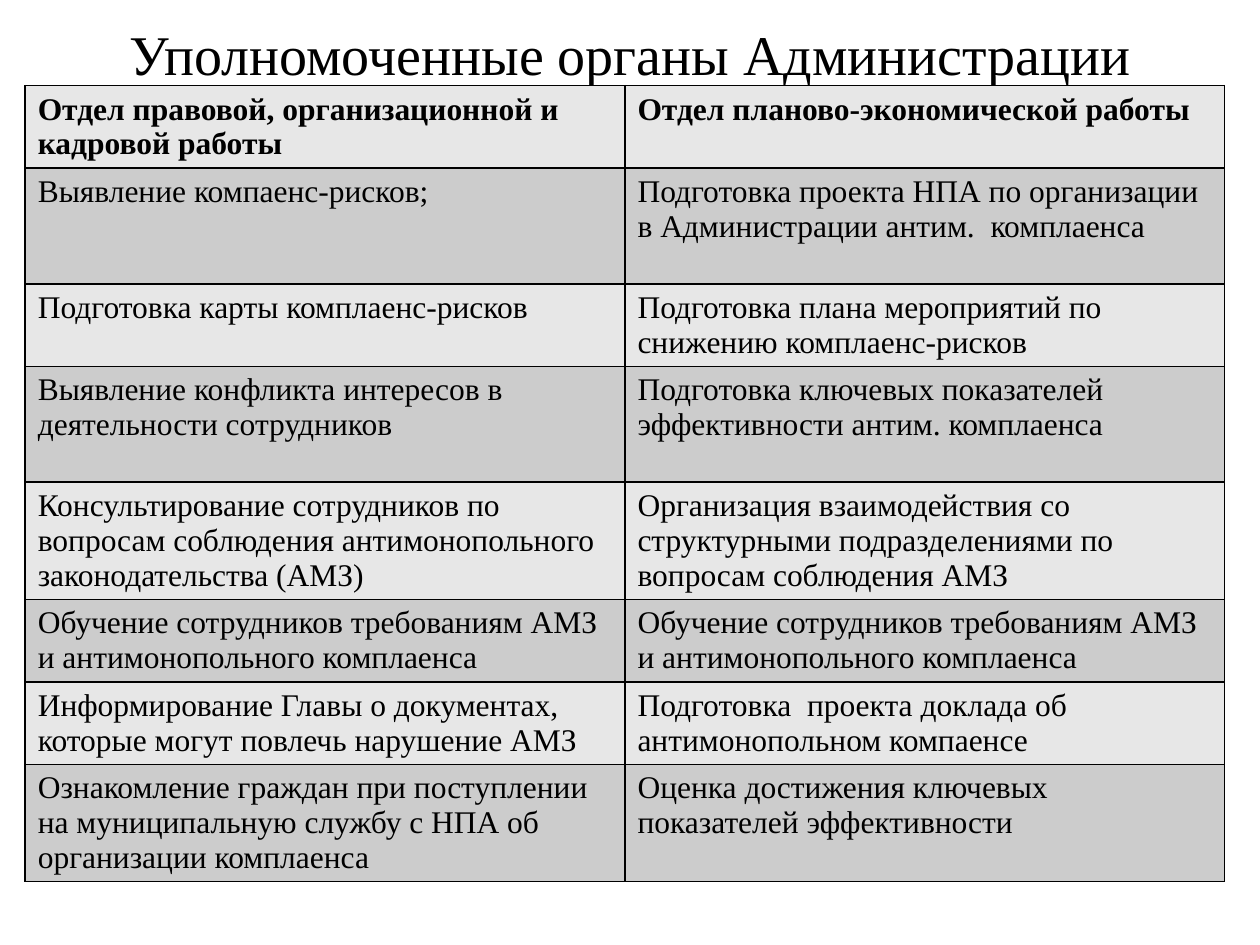
"""Build a slide with a table of the duties of two authorised departments."""
from dataclasses import dataclass

from lxml.etree import SubElement
from pptx import Presentation
from pptx.dml.color import RGBColor
from pptx.enum.text import MSO_ANCHOR, PP_ALIGN
from pptx.oxml.ns import qn
from pptx.util import Inches, Pt


@dataclass(frozen=True)
class Theme:
    font: str = "Times New Roman"
    ink: str = "000000"
    bands: tuple = ("E7E7E7", "CCCCCC")
    title_size: int = 32
    body_size: int = 18
    border_width: int = 1


THEME = Theme()
TITLE = "Уполномоченные органы Администрации"
SHORT, TALL = 0.65, 0.92
ROWS = [
    (SHORT, "Отдел правовой, организационной и кадровой работы",
     "Отдел планово-экономической работы"),
    (TALL, "Выявление компаенс-рисков;",
     "Подготовка проекта НПА по организации в Администрации антим.  комплаенса"),
    (SHORT, "Подготовка карты комплаенс-рисков",
     "Подготовка плана мероприятий по снижению комплаенс-рисков"),
    (TALL, "Выявление конфликта интересов в деятельности сотрудников",
     "Подготовка ключевых показателей эффективности антим. комплаенса"),
    (TALL, "Консультирование сотрудников по вопросам соблюдения "
           "антимонопольного законодательства (АМЗ)",
     "Организация взаимодействия со структурными подразделениями "
     "по вопросам соблюдения АМЗ"),
    (SHORT, "Обучение сотрудников требованиям АМЗ и антимонопольного комплаенса",
     "Обучение сотрудников требованиям АМЗ и антимонопольного комплаенса"),
    (SHORT, "Информирование Главы о документах, которые могут повлечь нарушение АМЗ",
     "Подготовка  проекта доклада об антимонопольном компаенсе"),
    (TALL, "Ознакомление граждан при поступлении на муниципальную службу "
           "с НПА об организации комплаенса",
     "Оценка достижения ключевых показателей эффективности"),
]
TABLE_LEFT, TABLE_TOP, COLUMN_WIDTH = 0.2, 0.68, 4.76


def write(frame, text, size, bold=False, align=PP_ALIGN.LEFT):
    para = frame.paragraphs[0]
    para.alignment = align
    span = para.add_run()
    span.text = text
    span.font.name = THEME.font
    span.font.size = Pt(size)
    span.font.bold = bold
    span.font.color.rgb = RGBColor.from_string(THEME.ink)


def add_borders(cell):
    properties = cell._tc.get_or_add_tcPr()
    for side in ("a:lnL", "a:lnR", "a:lnT", "a:lnB"):
        line = SubElement(properties, qn(side), w=str(Pt(THEME.border_width)))
        fill = SubElement(line, qn("a:solidFill"))
        SubElement(fill, qn("a:srgbClr"), val=THEME.ink)


def add_title(page):
    title = page.shapes.title
    title.left, title.top = Inches(0.51), Inches(0.17)
    title.width, title.height = Inches(8.99), Inches(0.51)
    frame = title.text_frame
    frame.word_wrap = True
    frame.vertical_anchor = MSO_ANCHOR.MIDDLE
    write(frame, TITLE, THEME.title_size, align=PP_ALIGN.CENTER)


def add_duties(page):
    columns = len(ROWS[0]) - 1
    height = sum(row[0] for row in ROWS)
    table = page.shapes.add_table(
        len(ROWS), columns, Inches(TABLE_LEFT), Inches(TABLE_TOP),
        Inches(columns * COLUMN_WIDTH), Inches(height)).table
    for column in table.columns:
        column.width = Inches(COLUMN_WIDTH)
    for index, (row_height, *texts) in enumerate(ROWS):
        table.rows[index].height = Inches(row_height)
        band = THEME.bands[index % len(THEME.bands)]
        for cell, text in zip(table.rows[index].cells, texts):
            add_borders(cell)
            cell.fill.solid()
            cell.fill.fore_color.rgb = RGBColor.from_string(band)
            write(cell.text_frame, text, THEME.body_size, bold=index == 0)


def main():
    deck = Presentation()
    deck.slide_width, deck.slide_height = Inches(10), Inches(7.5)
    page = deck.slides.add_slide(deck.slide_layouts[5])
    add_title(page)
    add_duties(page)
    deck.save("out.pptx")


if __name__ == "__main__":
    main()
